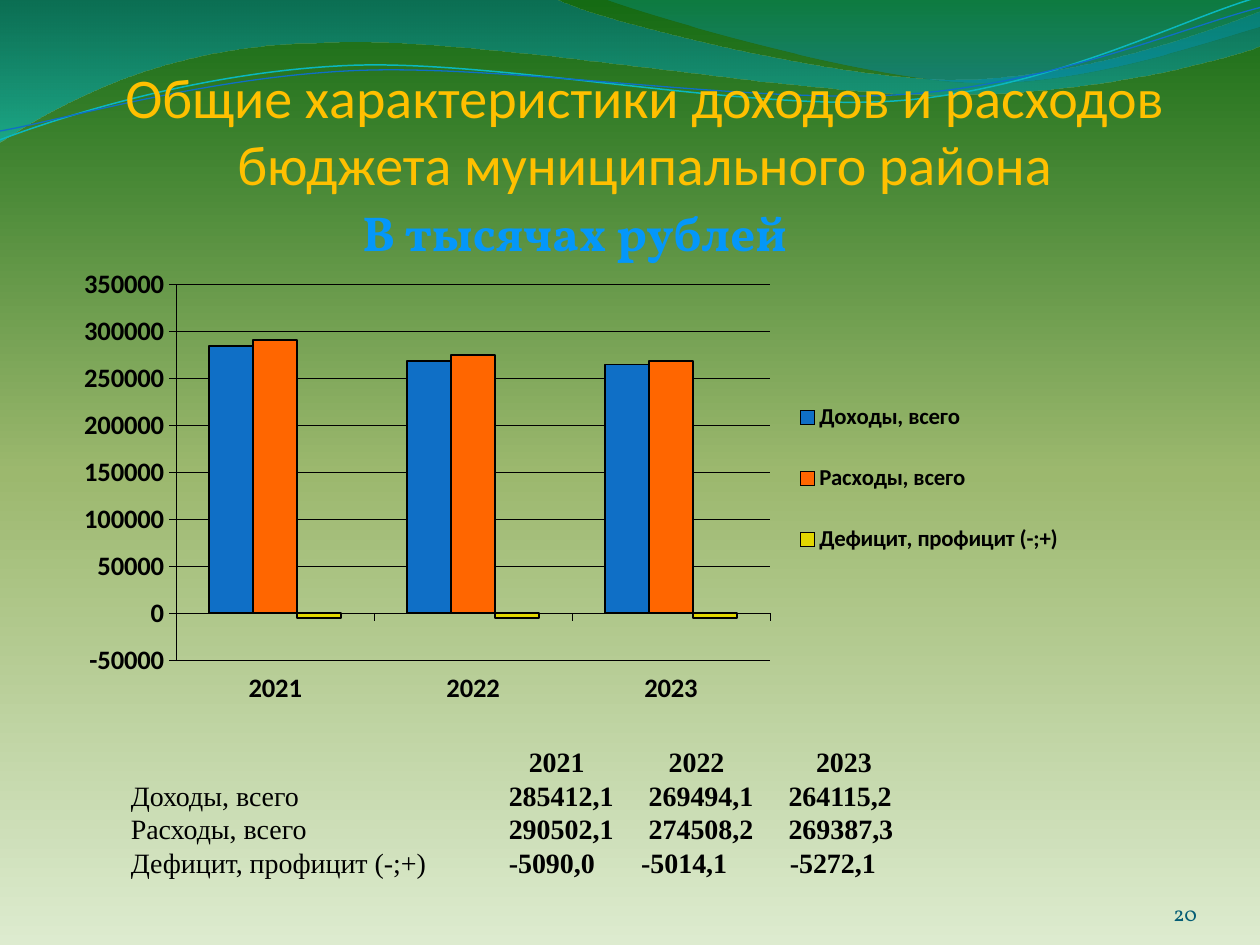
from dataclasses import dataclass

from lxml import etree
from pptx import Presentation
from pptx.chart.data import CategoryChartData
from pptx.dml.color import RGBColor
from pptx.enum.chart import XL_CHART_TYPE, XL_LEGEND_POSITION, XL_TICK_LABEL_POSITION, XL_TICK_MARK
from pptx.enum.text import MSO_ANCHOR, PP_ALIGN
from pptx.oxml import parse_xml
from pptx.oxml.ns import nsdecls, qn
from pptx.util import Inches, Pt

LEFT, CENTER, RIGHT = PP_ALIGN.LEFT, PP_ALIGN.CENTER, PP_ALIGN.RIGHT
TOP, BOTTOM = MSO_ANCHOR.TOP, MSO_ANCHOR.BOTTOM
COLUMNS = XL_CHART_TYPE.COLUMN_CLUSTERED
LEGEND_RIGHT = XL_LEGEND_POSITION.RIGHT
TICK_OUT = XL_TICK_MARK.OUTSIDE
LABELS_LOW = XL_TICK_LABEL_POSITION.LOW
SEGMENTS = {1: "a:lnTo", 3: "a:cubicBezTo"}


@dataclass(frozen=True)
class Theme:
    heading: str = "Calibri"
    accent: str = "Vollkorn"
    body: str = "Times New Roman"
    title_color: str = "FFC000"
    number_color: str = "045D75"
    ink: str = "000000"
    series: tuple = ("0F6FC6", "FF6600", "E2D700")
    background: tuple = ((0, "DDEBCF", 100), (50, "9CB86E", 100), (100, "156B13", 100))
    wave_left: tuple = ((0, "0074A1", 45), (100, "00C6CF", 55))
    wave_right: tuple = ((0, "00A1A9", 30), (80, "008BBF", 45))
    unit: tuple = ((0, "7DC4FF", 100), (75, "0497F9", 100), (100, "0074A1", 100))
    line_light: str = "0AB8BF"
    line_dark: str = "0F6FC6"
    title_size: float = 32
    unit_size: float = 28
    body_size: float = 16
    axis_size: float = 15.2
    legend_size: float = 13
    number_size: float = 12


class SlideBuilder:
    def __init__(self, slide, theme):
        self.s = slide
        self.theme = theme

    def gradient(self, fill, element, stops, angle):
        fill.gradient()
        grad = element.xpath(".//a:gradFill")[0]
        items = "".join(
            f'<a:gs pos="{pos * 1000}"><a:srgbClr val="{color}">'
            f'<a:alpha val="{alpha * 1000}"/></a:srgbClr></a:gs>'
            for pos, color, alpha in stops)
        new = parse_xml(f'<a:gradFill {nsdecls("a")} rotWithShape="1"><a:gsLst>{items}</a:gsLst>'
                        f'<a:lin ang="{angle * 60000}" scaled="0"/></a:gradFill>')
        grad.getparent().replace(grad, new)

    def background(self, stops):
        self.gradient(self.s.background.fill, self.s._element, stops, 270)

    def freeform(self, box, start, segments, closed):
        left, top, width, height = (round(v * 100) for v in box)
        builder = self.s.shapes.build_freeform(left, top, scale=Inches(0.01))
        builder.add_line_segments([(left + width, top), (left + width, top + height),
                                   (left, top + height)], close=closed)
        sp = builder.convert_to_shape()
        sp.shadow.inherit = False
        outline = sp._element.xpath(".//a:path")[0]
        for child in list(outline):
            outline.remove(child)

        def add(tag, numbers):
            node = etree.SubElement(outline, qn(tag))
            for x, y in zip(numbers[::2], numbers[1::2]):
                etree.SubElement(node, qn("a:pt"), x=str(round(x * 100) - left),
                                 y=str(round(y * 100) - top))

        add("a:moveTo", start)
        for numbers in segments:
            add(SEGMENTS[len(numbers) // 2], numbers)
        if closed:
            etree.SubElement(outline, qn("a:close"))
        return sp

    def wave(self, box, start, segments, stops):
        sp = self.freeform(box, start, segments, True)
        self.gradient(sp.fill, sp._element, stops, 90)
        sp.line.fill.background()

    def curve(self, box, start, segments, color, width):
        sp = self.freeform(box, start, segments, False)
        sp.fill.background()
        sp.line.color.rgb = RGBColor.from_string(color)
        sp.line.width = Pt(width)

    def frame(self, x, y, w, h, anchor=TOP, insets=(0.1, 0.05, 0.1, 0.05)):
        sp = self.s.shapes.add_textbox(Inches(x), Inches(y), Inches(w), Inches(h))
        tf = sp.text_frame
        tf.word_wrap = True
        tf.vertical_anchor = anchor
        tf.margin_left, tf.margin_top, tf.margin_right, tf.margin_bottom = map(Inches, insets)
        return tf

    def font(self, font, name, size, color=None, bold=False):
        font.name, font.size, font.bold = name, Pt(size), bold
        if color:
            font.color.rgb = RGBColor.from_string(color)

    def run(self, p, text, name, size, color=None, bold=False):
        r = p.add_run()
        r.text = text
        self.font(r.font, name, size, color, bold)
        return r

    def line(self, tf, align, text, *style):
        p = tf.paragraphs[0]
        p.alignment = align
        return self.run(p, text, *style)

    def tabbed_rows(self, tf, rows):
        t = self.theme
        for i, (label, values, align, stops) in enumerate(rows):
            p = tf.paragraphs[0] if i == 0 else tf.add_paragraph()
            p.alignment = LEFT
            tabs = etree.SubElement(p._p.get_or_add_pPr(), qn("a:tabLst"))
            for stop in stops:
                etree.SubElement(tabs, qn("a:tab"), pos=str(Inches(stop)), algn=align)
            if label:
                self.run(p, label, t.body, t.body_size, t.ink)
            self.run(p, "".join("\t" + v for v in values), t.body, t.body_size, t.ink, True)

    def layout(self, parent, position, size, box, inner=False):
        for old in parent.findall(qn("c:layout")):
            parent.remove(old)
        target = '<c:layoutTarget val="inner"/>' if inner else ""
        parts = "".join(f'<c:{tag} val="{v / whole}"/>'
                        for tag, v, whole in zip("xywh", box, size * 2))
        parent.insert(position, parse_xml(
            f'<c:layout {nsdecls("c")}><c:manualLayout>{target}<c:xMode val="edge"/>'
            f'<c:yMode val="edge"/>{parts}</c:manualLayout></c:layout>'))

    def outline(self, line, width):
        line.color.rgb = RGBColor.from_string(self.theme.ink)
        line.width = Pt(width)

    def column_chart(self, x, y, w, h, categories, series):
        t = self.theme
        data = CategoryChartData(number_format="General")
        data.categories = categories
        for name, values in series:
            data.add_series(name, values)
        chart = self.s.shapes.add_chart(
            COLUMNS, Inches(x), Inches(y), Inches(w), Inches(h), data).chart
        chart.has_title = False
        self.font(chart.font, t.heading, t.axis_size, t.ink, True)
        plot = chart.plots[0]
        plot.gap_width, plot.overlap, plot.vary_by_categories = 150, 0, False
        for ser, color in zip(plot.series, t.series):
            ser.invert_if_negative = False
            ser.format.fill.solid()
            ser.format.fill.fore_color.rgb = RGBColor.from_string(color)
            self.outline(ser.format.line, 1)
        for axis in (chart.category_axis, chart.value_axis):
            axis.major_tick_mark = TICK_OUT
            self.font(axis.tick_labels.font, t.heading, t.axis_size, t.ink, True)
            self.outline(axis.format.line, 0.25)
        chart.category_axis.tick_label_position = LABELS_LOW
        self.outline(chart.value_axis.major_gridlines.format.line, 0.25)
        chart.has_legend = True
        chart.legend.position = LEGEND_RIGHT
        chart.legend.include_in_layout = False
        self.font(chart.legend.font, t.heading, t.legend_size, t.ink, True)
        self.layout(chart.legend._element, 1, (w, h), (5.61, 0.91, 2.43, 1.72))
        self.layout(chart._chartSpace.chart.plotArea, 0, (w, h), (0.85, 0.23, 4.71, 2.98), True)


def main():
    prs = Presentation()
    prs.slide_width, prs.slide_height = Inches(10), Inches(7.5)
    t = Theme()
    b = SlideBuilder(prs.slides.add_slide(prs.slide_layouts[6]), t)

    b.background(t.background)
    b.wave((-0.01, -0.01, 10.02, 1.14), (0, -0.01),
           [(4.4, -0.01), (4.76, 0.17, 6.64, 0.63, 7.58, 0.63), (8.53, 0.63, 9.58, 0.26, 10, 0.09),
            (10.01, 0.36), (9.83, 0.44, 8.7, 0.76, 7.46, 0.75), (6.22, 0.75, 3.82, 0.28, 2.57, 0.34),
            (1.29, 0.35, 0.46, 0.83, -0.01, 1.13), (0, -0.01)], t.wave_left)
    b.wave((4.79, -0.01, 5.21, 0.7), (4.79, -0.01),
           [(5.09, 0.11, 6.82, 0.62, 7.69, 0.65), (8.56, 0.69, 9.61, 0.32, 10, 0.21),
            (10, 0), (4.79, -0.01)], t.wave_right)
    b.curve((0, -0.02, 9.98, 1.13), (0, 1.11),
            [(0.48, 0.93, 1.58, 0.57, 2.77, 0.52), (3.95, 0.47, 5.93, 0.89, 7.13, 0.8),
             (8.33, 0.71, 9.38, 0.15, 9.98, -0.02)], t.line_light, 0.85)
    b.curve((0, 0.06, 10, 0.98), (0, 1.04),
            [(0.47, 0.96, 1.64, 0.61, 2.83, 0.56), (4.03, 0.51, 5.97, 0.83, 7.17, 0.75),
             (8.36, 0.67, 9.41, 0.21, 10, 0.06)], t.line_dark, 0.75)

    b.line(b.frame(0.62, 0.31, 9, 1.25, BOTTOM, (0, 0.05, 0, 0)), CENTER,
           "Общие характеристики доходов и расходов бюджета муниципального района",
           t.heading, t.title_size, t.title_color)
    r = b.line(b.frame(2.5, 1.56, 4.12, 0.57), CENTER, "В тысячах рублей",
               t.accent, t.unit_size, None, True)
    b.gradient(r.font.fill, r._r, t.unit, 90)
    b.line(b.frame(8.67, 6.95, 0.83, 0.4, BOTTOM, (0, 0, 0, 0)), RIGHT, "20",
           t.accent, t.number_size, t.number_color)

    years = ("2021", "2022", "2023")
    names = ("Доходы, всего", "Расходы, всего", "Дефицит, профицит (-;+)")
    columns = (3, 4.11, 5.22)
    b.tabbed_rows(b.frame(0.94, 5.86, 7.5, 1.18), [
        ("", years, "ctr", (3.38, 4.49, 5.66)),
        (names[0], ("285412,1", "269494,1", "264115,2"), "l", columns),
        (names[1], ("290502,1", "274508,2", "269387,3"), "l", columns),
        (names[2], ("-5090,0", "-5014,1", "-5272,1"), "l", (3, 4.05, 5.23))])

    heights = ((285000, 269000, 265000), (291000, 275000, 269000), (-5000, -5000, -5000))
    b.column_chart(0.55, 2.03, 8.1, 3.75, years, list(zip(names, heights)))
    prs.save("out.pptx")


if __name__ == "__main__":
    main()
